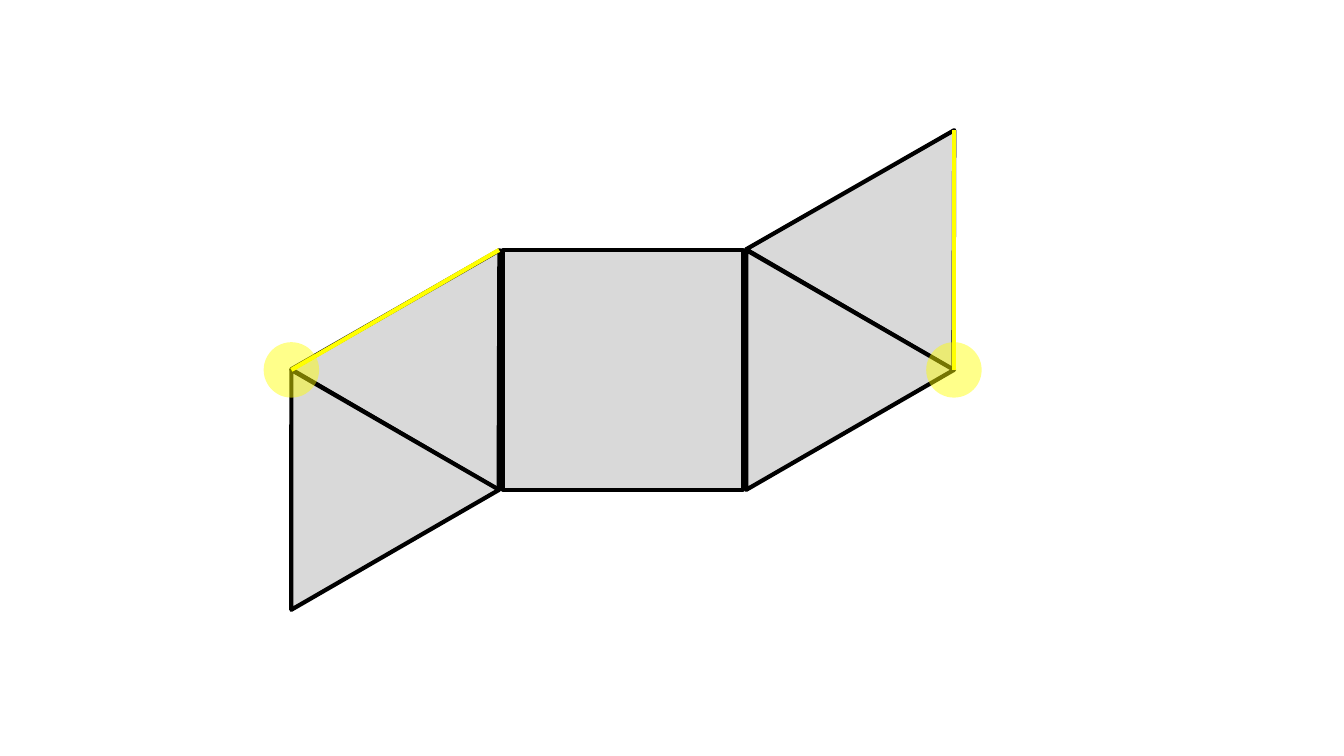
from pptx import Presentation
from pptx import util as u
from pptx.dml.color import RGBColor
from pptx.enum import shapes as s
from pptx.oxml.ns import qn
from lxml import etree

LEFT, TOP = 2.89, 1.29
COL, ROW = 2.06, 1.19
SIDE = 2 * ROW
WING = 2.19
END = WING + 1
MID = END / 2
KIND = s.MSO_SHAPE


def spot(col, row):
    return u.Inches(LEFT + col * COL), u.Inches(TOP + row * ROW)


def tint(fmt, color):
    fmt.solid()
    fmt.fore_color.rgb = RGBColor.from_string(color)


def place(shapes, kind, col, row, wide, high, color):
    x, y = spot(col, row)
    w, h = u.Inches(wide), u.Inches(high)
    shape = shapes.add_shape(kind, x - w // 2, y - h // 2, w, h)
    shape.shadow.inherit = False
    tint(shape.fill, color)
    return shape


def face(net, kind, col, row, high, turn=0):
    shape = place(net.shapes, kind, col, row, SIDE, high, "D9D9D9")
    shape.rotation = turn
    tint(shape.line.fill, "000000")
    shape.line.width = u.Pt(3)


def dot(slide, col, row):
    shape = place(slide.shapes, KIND.OVAL, col, row, 0.55, 0.55, "FFFF00")
    shape.line.fill.background()
    color = shape.fill._xPr.find(qn("a:solidFill"))[0]
    etree.SubElement(color, qn("a:alpha"), val="46000")


def edge(slide, start, end):
    line = slide.shapes.add_connector(s.MSO_CONNECTOR.STRAIGHT, *spot(*start), *spot(*end))
    tint(line.line.fill, "FFFF00")
    line.line.width = u.Pt(3)
    etree.SubElement(line._element.spPr, qn("a:effectLst"))


def main():
    deck = Presentation()
    deck.slide_width, deck.slide_height = u.Inches(13.33), u.Inches(7.5)
    slide = deck.slides.add_slide(deck.slide_layouts[6])

    net = slide.shapes.add_group_shape()
    tri = KIND.ISOSCELES_TRIANGLE
    face(net, tri, 0.75, 1.75, COL, 30.2)
    face(net, KIND.RECTANGLE, MID, 2, SIDE)
    face(net, tri, 0.25, 2.75, COL, 330)
    face(net, tri, WING + 0.75, 0.75, COL, 30.2)
    face(net, tri, WING + 0.25, 1.75, COL, 330)

    for col in (0, END):
        dot(slide, col, 2)
    edge(slide, (0, 2), (1, 1))
    edge(slide, (END, 2), (END, 0))
    deck.save("out.pptx")


if __name__ == "__main__":
    main()
